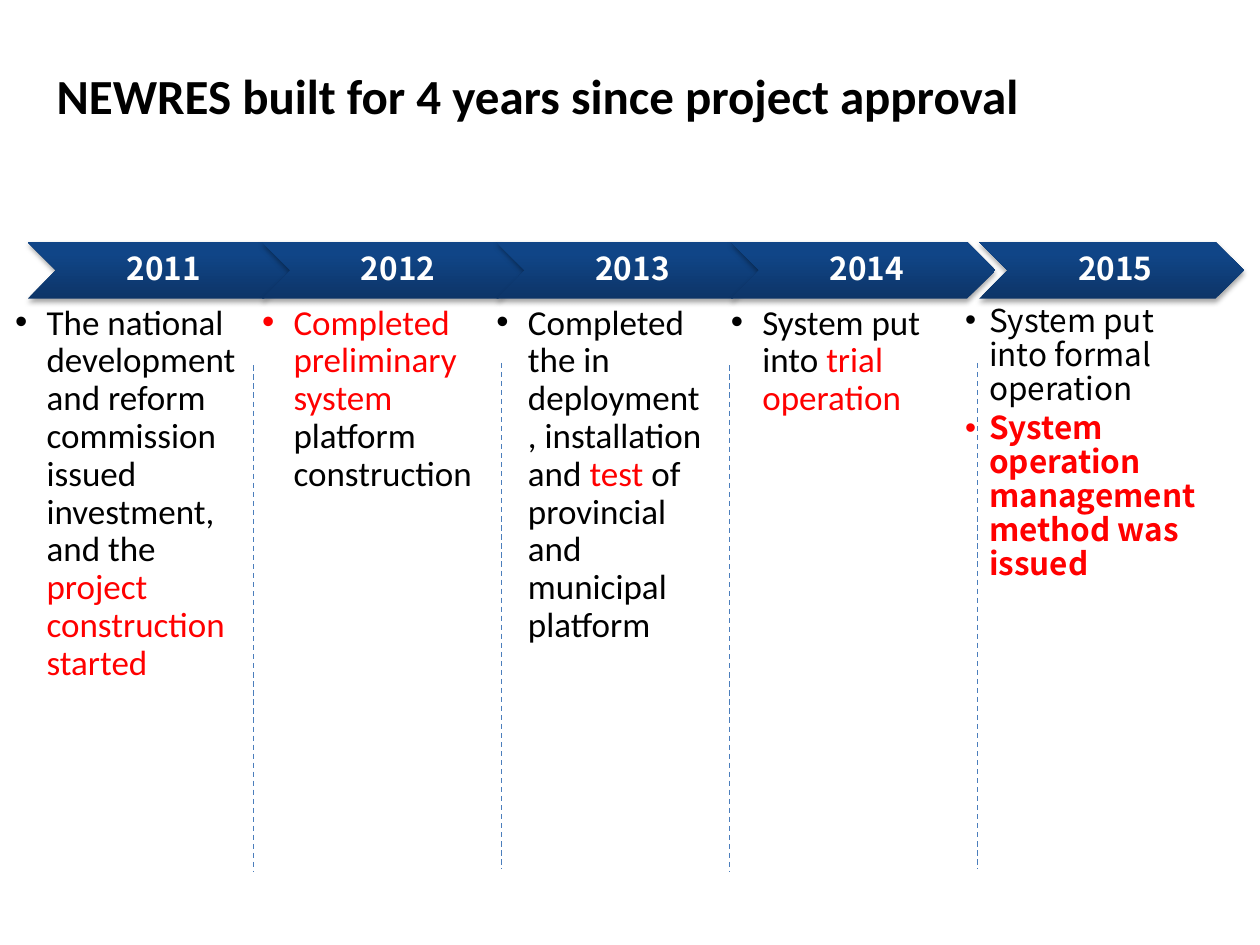
from lxml import etree
from pptx import Presentation
from pptx.dml.color import RGBColor
from pptx.enum.dml import MSO_LINE
from pptx.enum.shapes import MSO_CONNECTOR, MSO_SHAPE
from pptx.enum.text import MSO_ANCHOR, PP_ALIGN
from pptx.oxml import parse_xml
from pptx.oxml.ns import nsdecls, qn
from pptx.util import Inches, Pt

CHEVRON = MSO_SHAPE.CHEVRON
STRAIGHT = MSO_CONNECTOR.STRAIGHT
DASH = MSO_LINE.DASH
MIDDLE, TOP = MSO_ANCHOR.MIDDLE, MSO_ANCHOR.TOP
LEFT, CENTER = PP_ALIGN.LEFT, PP_ALIGN.CENTER
TITLE_ONLY = 5

BLACK, RED, WHITE, BLUE = "000000", "FF0000", "FFFFFF", "4B7EBC"
LATIN, HEADING = "Calibri", "Noto Sans CJK SC"
GRADIENT = [(0, "0D3568"), (80, "104587"), (100, "0E458A")]


def color(value):
    return RGBColor.from_string(value)


class Timeline:
    grid_left, column_width = 0.22, 1.86
    band_top, band_height = 1.92, 0.45
    list_top, list_height = 2.42, 3.16

    def __init__(self, presentation):
        self.slide = presentation.slides.add_slide(presentation.slide_layouts[TITLE_ONLY])

    def column(self, index):
        return self.grid_left + index * self.column_width

    def run(self, paragraph, text, size, font, fill, bold=False):
        run = paragraph.add_run()
        run.text = text
        run.font.size = Pt(size)
        run.font.name = font
        run.font.bold = bold
        run.font.color.rgb = color(fill)

    def title(self, text):
        shape = self.slide.shapes.title
        shape.left, shape.top = Inches(0.35), Inches(0.13)
        shape.width, shape.height = Inches(9.29), Inches(1.25)
        shape.text_frame.vertical_anchor = MIDDLE
        paragraph = shape.text_frame.paragraphs[0]
        paragraph.alignment = LEFT
        self.run(paragraph, text, 28, LATIN, BLACK, True)

    def text_box(self, left, top, width, height, insets, anchor):
        box = self.slide.shapes.add_textbox(*map(Inches, (left, top, width, height)))
        frame = box.text_frame
        frame.word_wrap = True
        frame.vertical_anchor = anchor
        frame.margin_left, frame.margin_top, frame.margin_right, frame.margin_bottom = map(Inches, insets)
        return frame

    def year(self, index, text):
        left = self.column(index)
        shape = self.slide.shapes.add_shape(
            CHEVRON, *map(Inches, (left, self.band_top, 2.1, self.band_height)))
        shape.line.fill.background()
        shape.shadow.inherit = False
        properties = shape.element.spPr
        stops = "".join(f'<a:gs pos="{position * 1000}"><a:srgbClr val="{value}"/></a:gs>'
                        for position, value in GRADIENT)
        properties.insert(2, parse_xml(
            f'<a:gradFill {nsdecls("a")} rotWithShape="1"><a:gsLst>{stops}</a:gsLst>'
            '<a:lin ang="16200000" scaled="0"/></a:gradFill>'))
        properties.find(qn("a:effectLst")).append(parse_xml(
            f'<a:outerShdw {nsdecls("a")} blurRad="{Pt(3.1)}" dist="{Pt(1.8)}" dir="5400000" '
            'rotWithShape="0"><a:srgbClr val="000000"><a:alpha val="35000"/></a:srgbClr></a:outerShdw>'))
        frame = self.text_box(left + 0.23, self.band_top, 1.65, self.band_height,
                              (0.08, 0.03, 0.03, 0.03), MIDDLE)
        paragraph = frame.paragraphs[0]
        paragraph.alignment = CENTER
        paragraph.line_spacing = 0.9
        self.run(paragraph, text, 18, HEADING, WHITE, True)

    def bullets(self, left, width, items, size=20, font=LATIN, indent=0.25):
        frame = self.text_box(left, self.list_top, width, self.list_height, (0, 0, 0, 0), TOP)
        for number, runs in enumerate(items):
            paragraph = frame.add_paragraph() if number else frame.paragraphs[0]
            properties = paragraph._p.get_or_add_pPr()
            properties.set("lvl", "1")
            properties.set("marL", str(Inches(indent)))
            properties.set("indent", str(Inches(-indent)))
            etree.SubElement(properties, qn("a:buFont")).set("typeface", "Arial")
            etree.SubElement(properties, qn("a:buChar")).set("char", "•")
            paragraph.line_spacing = 0.9
            paragraph.space_after = Pt(3)
            for text, fill, *bold in runs:
                self.run(paragraph, text, size, font, fill, bool(bold))

    def divider(self, x, top):
        line = self.slide.shapes.add_connector(
            STRAIGHT, *map(Inches, (x, top, x, top + 4.02)))
        line.line.color.rgb = color(BLUE)
        line.line.width = Pt(0.75)
        line.line.dash_style = DASH
        etree.SubElement(line.element.spPr, qn("a:effectLst"))


def main():
    presentation = Presentation()
    presentation.slide_width, presentation.slide_height = Inches(10), Inches(7.5)
    timeline = Timeline(presentation)
    timeline.title("NEWRES built for 4 years since project approval")

    for index, year in zip((0, 1, 2, 3, 4.06), range(2011, 2016)):
        timeline.year(index, str(year))

    timeline.bullets(0.12, 1.87, [[
        ("The national development and reform commission issued investment, and the ", BLACK),
        ("project construction started", RED)]])
    milestones = [
        [("Completed preliminary system ", RED), ("platform construction", BLACK)],
        [("Completed the in deployment , installation and ", BLACK), ("test", RED),
         (" of provincial and municipal platform", BLACK)],
        [("System put into ", BLACK), ("trial operation", RED)],
    ]
    for index, runs in enumerate(milestones, 1):
        timeline.bullets(timeline.column(index), 1.68, [runs])
    timeline.bullets(7.66, 1.91, [
        [("System put into formal operation", BLACK)],
        [("System operation management method was issued", RED, True)],
    ], size=18, font=HEADING, indent=0.19)

    for x, top in ((2.01, 2.9), (3.98, 2.88), (5.79, 2.9), (7.76, 2.88)):
        timeline.divider(x, top)
    presentation.save("out.pptx")


if __name__ == "__main__":
    main()
